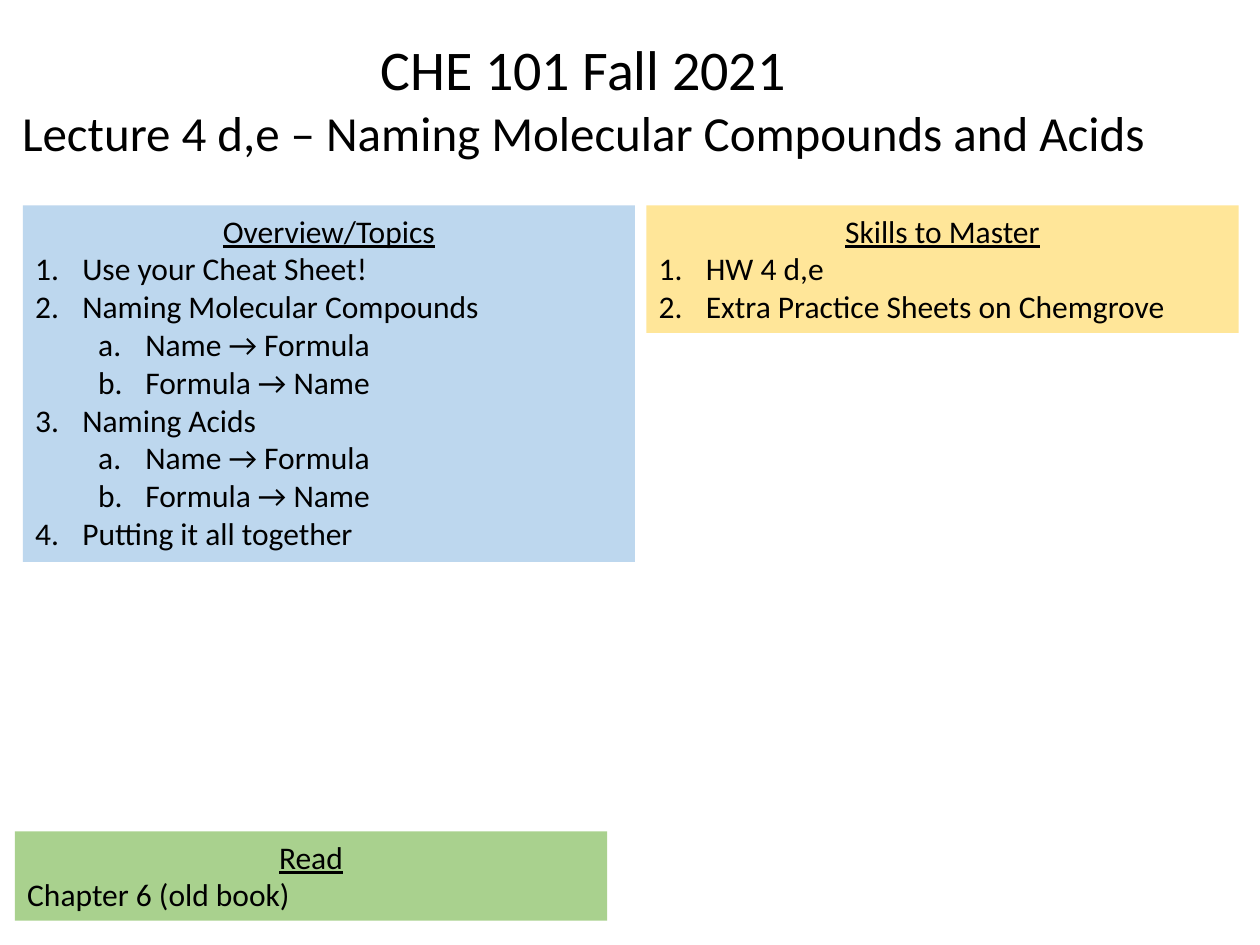
import pptx
import pptx.dml.color
import pptx.enum.text
import pptx.util
from lxml import etree
from pptx.oxml.ns import qn
from pptx.util import Cm

COLORS = {
    "text": "000000",
    "topics": "BDD7EE",
    "skills": "FFE699",
    "reading": "A9D18E",
}
CENTER = pptx.enum.text.PP_ALIGN.CENTER
HANGING = Cm(0.95)
LEVEL_STEP = Cm(1.27)
NUMBERING = ("arabicPeriod", "alphaLcPeriod")

TOPICS = [
    (0, "Use your Cheat Sheet!"),
    (0, "Naming Molecular Compounds"),
    (1, "Name → Formula"),
    (1, "Formula → Name"),
    (0, "Naming Acids"),
    (1, "Name → Formula"),
    (1, "Formula → Name"),
    (0, "Putting it all together"),
]
SKILLS = [(0, "HW 4 d,e"), (0, "Extra Practice Sheets on Chemgrove")]


def rgb(name):
    return pptx.dml.color.RGBColor.from_string(COLORS[name])


def add_text_box(slide, left, top, width, height, wrap=True, fill=None):
    shape = slide.shapes.add_textbox(Cm(left), Cm(top), Cm(width), Cm(height))
    if fill:
        shape.fill.solid()
        shape.fill.fore_color.rgb = rgb(fill)
    shape.text_frame.word_wrap = wrap
    shape.text_frame.auto_size = pptx.enum.text.MSO_AUTO_SIZE.SHAPE_TO_FIT_TEXT
    return shape.text_frame


def write(paragraph, text, size=18, underline=False, alignment=None):
    paragraph.text = text
    paragraph.alignment = alignment
    font_format = {"name": "Calibri", "size": pptx.util.Pt(size), "underline": underline}
    for attribute, value in font_format.items():
        setattr(paragraph.runs[0].font, attribute, value)
    paragraph.runs[0].font.color.rgb = rgb("text")


def number(paragraph, level):
    """Number a paragraph automatically, with a hanging indent for its level."""
    paragraph.level = level
    properties = paragraph._p.get_or_add_pPr()
    properties.set("marL", str(HANGING + level * LEVEL_STEP))
    properties.set("indent", str(-HANGING))
    etree.SubElement(properties, qn("a:buFont"), typeface="+mj-lt")
    etree.SubElement(properties, qn("a:buAutoNum"), type=NUMBERING[level])


def add_panel(slide, position, fill, heading):
    frame = add_text_box(slide, *position, fill=fill)
    write(frame.paragraphs[0], heading, underline=True, alignment=CENTER)
    return frame


def add_numbered_panel(slide, position, fill, heading, items):
    frame = add_panel(slide, position, fill, heading)
    for level, text in items:
        paragraph = frame.add_paragraph()
        number(paragraph, level)
        write(paragraph, text)


def add_title(slide, title, subtitle):
    frame = add_text_box(slide, 0.05, 0.58, 23.42, 2.82, wrap=False)
    write(frame.paragraphs[0], title, size=32, alignment=CENTER)
    write(frame.add_paragraph(), subtitle, size=28, alignment=CENTER)


def main():
    presentation = pptx.Presentation()
    presentation.slide_width = Cm(25.4)
    presentation.slide_height = Cm(19.05)
    slide = presentation.slides.add_slide(presentation.slide_layouts[6])

    add_numbered_panel(slide, (0.46, 4.14, 12.34, 7.19), "topics", "Overview/Topics", TOPICS)
    add_numbered_panel(slide, (13.03, 4.14, 11.94, 2.57), "skills", "Skills to Master", SKILLS)
    reading = add_panel(slide, (0.3, 16.76, 11.94, 1.8), "reading", "Read")
    write(reading.add_paragraph(), "Chapter 6 (old book)")
    add_title(slide, "CHE 101 Fall 2021",
              "Lecture 4 d,e – Naming Molecular Compounds and Acids")

    presentation.save("out.pptx")


if __name__ == "__main__":
    main()
